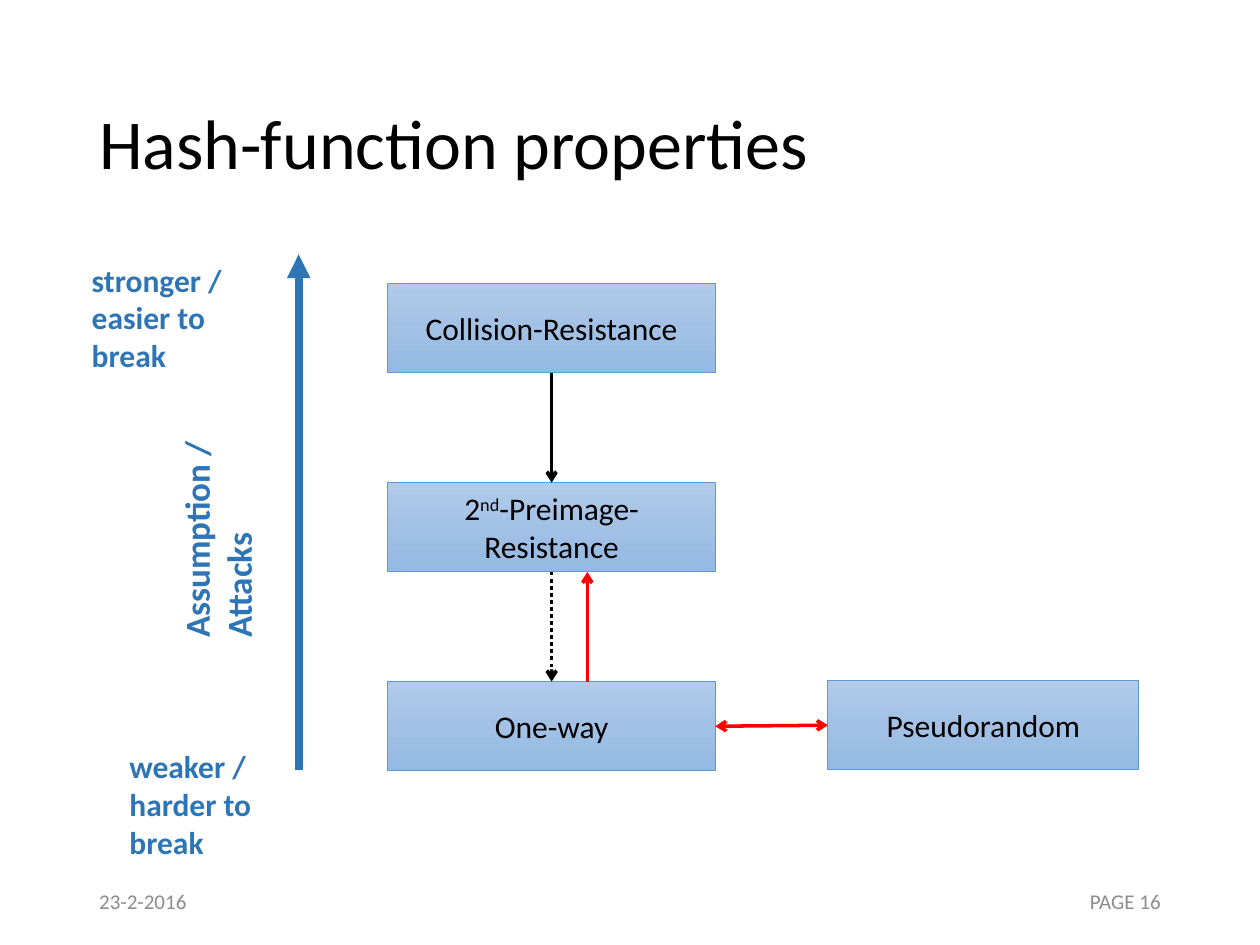
from copy import deepcopy

from lxml import etree
from pptx import Presentation
from pptx.dml.color import RGBColor
from pptx.enum.dml import MSO_LINE
from pptx.enum.shapes import MSO_CONNECTOR, MSO_SHAPE
from pptx.enum.text import MSO_ANCHOR, PP_ALIGN
from pptx.oxml.ns import qn
from pptx.util import Cm, Pt

LEFT, MID, RIGHT = PP_ALIGN.LEFT, PP_ALIGN.CENTER, PP_ALIGN.RIGHT
TOP, CENTER = MSO_ANCHOR.TOP, MSO_ANCHOR.MIDDLE
RECT, LINE, DOTS = MSO_SHAPE.RECTANGLE, MSO_CONNECTOR.STRAIGHT, MSO_LINE.ROUND_DOT


class Theme:
    face = "Calibri"
    black = RGBColor.from_string("000000")
    gray = RGBColor.from_string("8C8C8C")
    blue = RGBColor.from_string("2E75B6")
    red = RGBColor.from_string("FF0000")
    edge = RGBColor.from_string("5B9BD5")
    fade = [RGBColor.from_string(c) for c in ("B1CBE9", "A3C1E5", "93B9E4")]
    title, axis, body, foot = Pt(40), Pt(20), Pt(18), Pt(12)


def write(shape, text, size, color, align=LEFT, anchor=CENTER, bold=False):
    """Fill a shape with text; ^ marks the start and end of a superscript."""
    frame = shape.text_frame
    for name, value in {"word_wrap": True, "vertical_anchor": anchor}.items():
        setattr(frame, name, value)
    look = {"name": Theme.face, "size": size, "bold": bold}
    for i, part in enumerate(text.split("\n")):
        para = frame.add_paragraph() if i else frame.paragraphs[0]
        para.alignment = align
        for j, piece in enumerate(part.split("^")):
            run = para.add_run()
            run.text = piece
            for name, value in look.items():
                setattr(run.font, name, value)
            run.font.color.rgb = color
            if j % 2:
                run.font._element.set("baseline", "30000")


def arrow(x1, y1, x2, y2, color, width=2, dash=None, **ends):
    """Draw a line; headEnd and tailEnd name its arrowheads."""
    link = slide.shapes.add_connector(LINE, Cm(x1), Cm(y1), Cm(x2), Cm(y2))
    link.line.color.rgb = color
    for name, value in {"width": Pt(width), "dash_style": dash}.items():
        setattr(link.line, name, value)
    for end, kind in ends.items():
        etree.SubElement(link.line._get_or_add_ln(), qn("a:" + end), type=kind)
    etree.SubElement(link._element.spPr, qn("a:effectLst"))


deck = Presentation()
deck.slide_width, deck.slide_height = Cm(25.4), Cm(19.05)
slide = deck.slides.add_slide(deck.slide_layouts[6])

# Title, footer and axis labels
labels = [
    (1.75, 1.02, 21.9, 3.68, "Hash-function properties", 0,
     dict(size=Theme.title, color=Theme.black)),
    (1.75, 17.65, 5.72, 1.02, "23-2-2016", 0,
     dict(size=Theme.foot, color=Theme.gray)),
    (17.93, 17.65, 5.72, 1.02, "PAGE 16", 0,
     dict(size=Theme.foot, color=Theme.gray, align=RIGHT)),
    (2.03, 9.78, 4.7, 1.96, "Assumption / Attacks", 270,
     dict(size=Theme.axis, color=Theme.blue, anchor=TOP, bold=True)),
    (1.6, 5.13, 3.61, 2.57, "stronger / easier to break", 0,
     dict(size=Theme.body, color=Theme.blue, anchor=TOP, bold=True)),
    (2.36, 14.94, 3.73, 2.57, "weaker /\nharder to break", 0,
     dict(size=Theme.body, color=Theme.blue, anchor=TOP, bold=True)),
]
for x, y, w, h, text, turn, style in labels:
    label = slide.shapes.add_textbox(Cm(x), Cm(y), Cm(w), Cm(h))
    label.rotation = turn
    write(label, text, **style)

# Property boxes: a column of three, and one at the side
left, top, wide, high, step = 7.82, 5.72, 6.6, 1.8, 4.01
side = 16.69
rows = [top + i * step for i in range(3)]
names = ["Collision-Resistance", "2^nd^-Preimage-Resistance", "One-way"]
boxes = [(left, y, wide, name) for y, name in zip(rows, names)]
boxes.append((side, 13.72, 6.27, "Pseudorandom"))
for x, y, w, name in boxes:
    box = slide.shapes.add_shape(RECT, Cm(x), Cm(y), Cm(w), Cm(high))
    box.shadow.inherit = False
    box.line.color.rgb = Theme.edge
    box.line.width = Pt(0.5)
    box.fill.gradient()
    box.fill.gradient_angle = 270
    first = box._element.spPr.find(".//" + qn("a:gs"))
    first.addnext(deepcopy(first))
    for i, stop in enumerate(box.fill.gradient_stops):
        stop.position = i / 2
        stop.color.rgb = Theme.fade[i]
    write(box, name, Theme.body, Theme.black, MID)

# Implications between the properties
mid, back = left + wide / 2, 11.84
for y, dash in zip(rows, (None, DOTS)):
    arrow(mid, y + high, mid, y + step, Theme.black, dash=dash, tailEnd="arrow")
arrow(back, rows[2], back, rows[1] + high, Theme.red, tailEnd="arrow")
arrow(left + wide, rows[2] + high / 2, side, 13.72 + high / 2, Theme.red,
      headEnd="arrow", tailEnd="arrow")

# Strength axis
arrow(6.02, 15.52, 6.02, 5.13, Theme.blue, 4.5, tailEnd="triangle")

deck.save("out.pptx")
